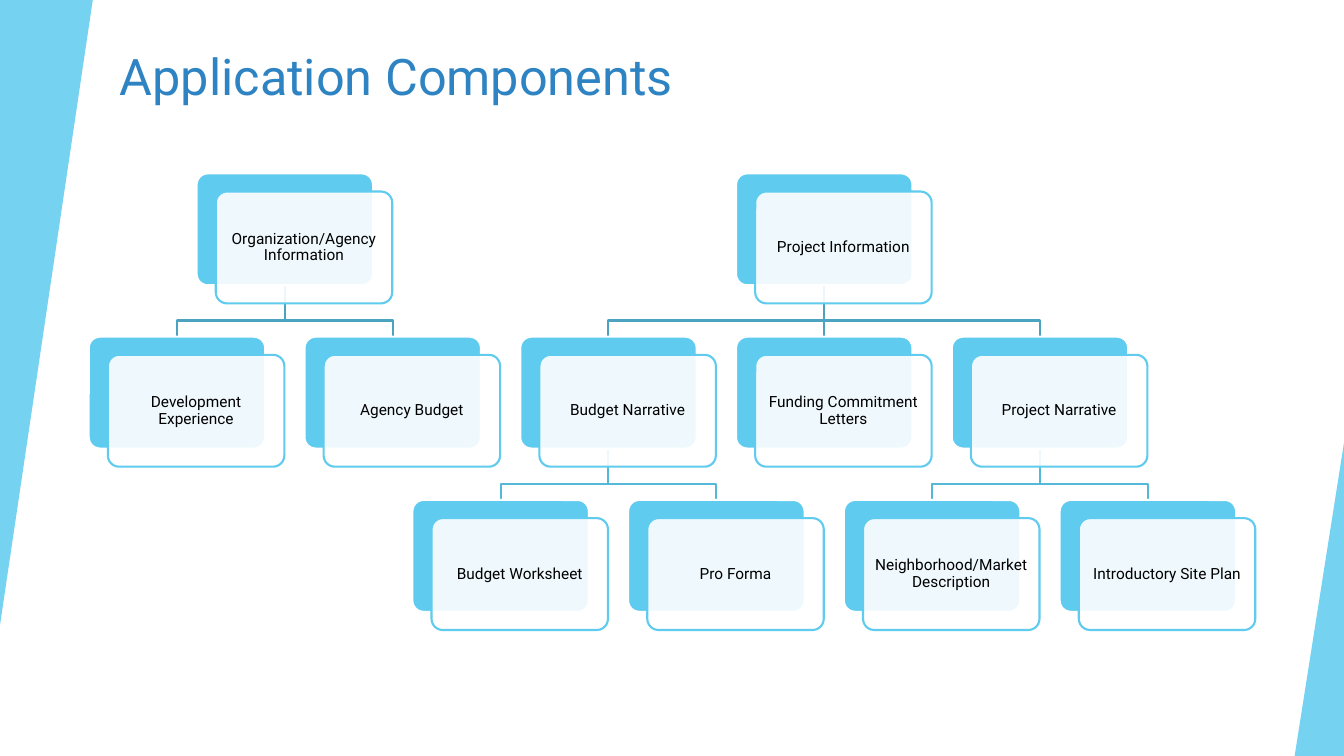
import pptx
import pptx.util
import pptx.dml.color
import pptx.enum.shapes
import pptx.enum.text
from lxml import etree

TITLE = "Application Components"
NODES = {
    "org": ("Organization/Agency Information", 1, 0, None),
    "exp": ("Development Experience", 0, 1, "org"),
    "cost": ("Agency Budget", 2, 1, "org"),
    "proj": ("Project Information", 6, 0, None),
    "plan": ("Budget Narrative", 4, 1, "proj"),
    "sheet": ("Budget Worksheet", 3, 2, "plan"),
    "form": ("Pro Forma", 5, 2, "plan"),
    "fund": ("Funding Commitment Letters", 6, 1, "proj"),
    "story": ("Project Narrative", 8, 1, "proj"),
    "area": ("Neighborhood/Market Description", 7, 2, "story"),
    "site": ("Introductory Site Plan", 9, 2, "story"),
}
WEDGES = [(0, 0, 0.92, 6.2, 180), (12.84, 4.39, 0.49, 3.11, 0)]
COLORS = {"sky": "5FCBEF", "white": "FFFFFF", "title": "2E83C3", "text": "000000"}
LINKS = {1: "4CA3BF", 2: "56B8D9"}
FONT = "Roboto"
LEFT, TOP = 0.88, 1.72
COL, ROW = 1.07, 1.62
WIDE, HIGH = 1.75, 1.11
SHIFT_X, SHIFT_Y = 0.19, 0.18
DROP = 0.35

Inch = pptx.util.Inches
Pt = pptx.util.Pt
Kind = pptx.enum.shapes.MSO_SHAPE
Align = pptx.enum.text.PP_ALIGN
Anchor = pptx.enum.text.MSO_ANCHOR

deck = pptx.Presentation()
deck.slide_width, deck.slide_height = Inch(13.33), Inch(7.5)
slide = deck.slides.add_slide(deck.slide_layouts[6])
shapes = slide.shapes


def rgb(code):
    return pptx.dml.color.RGBColor.from_string(code)


def paint(shape, code, share=100):
    shape.shadow.inherit = False
    shape.fill.solid()
    shape.fill.fore_color.rgb = rgb(code)
    if share < 100:
        tone = shape.fill._xPr.find(".//" + pptx.oxml.ns.qn("a:srgbClr"))
        etree.SubElement(tone, pptx.oxml.ns.qn("a:alpha")).set("val", str(share * 1000))


def stroke(shape, code):
    shape.line.color.rgb = rgb(code)
    shape.line.width = Pt(1.5)


def write(shape, text, size, code, align, pad):
    frame = shape.text_frame
    frame.word_wrap = True
    frame.vertical_anchor = Anchor.MIDDLE
    frame.margin_left = frame.margin_right = Inch(pad)
    frame.margin_top = frame.margin_bottom = Inch(0.05)
    frame.text = text
    para = frame.paragraphs[0]
    para.alignment = align
    font = para.runs[0].font
    font.name, font.size, font.color.rgb = FONT, Pt(size), rgb(code)
    return para


def spot(key):
    text, col, row, boss = NODES[key]
    return LEFT + col * COL, TOP + row * ROW


def link(key, boss):
    x, y = spot(key)
    bx, by = spot(boss)
    mid, start = x + WIDE / 2, bx + WIDE / 2
    base = by + HIGH
    if x == bx:
        line = shapes.add_connector(pptx.enum.shapes.MSO_CONNECTOR.STRAIGHT,
                                    Inch(start), Inch(base), Inch(mid), Inch(y))
        etree.SubElement(line._element.spPr, pptx.oxml.ns.qn("a:effectLst"))
        joins.append((line, boss, key))
    else:
        pen = shapes.build_freeform(Inch(start), Inch(base))
        pen.add_line_segments([(Inch(px), Inch(py)) for px, py in
                               [(start, base + DROP), (mid, base + DROP), (mid, y)]],
                              close=False)
        line = pen.convert_to_shape()
        line.shadow.inherit = False
        line.fill.background()
    stroke(line, LINKS[NODES[key][2]])


def card(x, y, fill, edge, share=100):
    box = shapes.add_shape(Kind.ROUNDED_RECTANGLE,
                           Inch(x), Inch(y), Inch(WIDE), Inch(HIGH))
    box.adjustments[0] = 0.1
    paint(box, COLORS[fill], share)
    stroke(box, COLORS[edge])
    return box


for x, y, wide, high, turn in WEDGES:
    wedge = shapes.add_shape(Kind.ISOSCELES_TRIANGLE,
                             Inch(x), Inch(y), Inch(wide), Inch(high))
    wedge.adjustments[0] = 1
    wedge.rotation = turn
    paint(wedge, COLORS["sky"], 85)
    wedge.line.fill.background()

title = shapes.add_textbox(Inch(1.09), Inch(0.35), Inch(9.4), Inch(0.8))
write(title, TITLE, 36, COLORS["title"], Align.LEFT, 0.1)

joins, backs = [], {}
for key, (text, col, row, boss) in NODES.items():
    if boss:
        link(key, boss)

for key, (text, col, row, boss) in NODES.items():
    x, y = spot(key)
    backs[key] = card(x, y, "sky", "white")
    front = card(x + SHIFT_X, y + SHIFT_Y, "white", "sky", 90)
    para = write(front, text, 11, COLORS["text"], Align.CENTER, 0.08)
    para.line_spacing = 0.9

for line, boss, key in joins:
    line.begin_connect(backs[boss], 2)
    line.end_connect(backs[key], 0)

deck.save("out.pptx")
